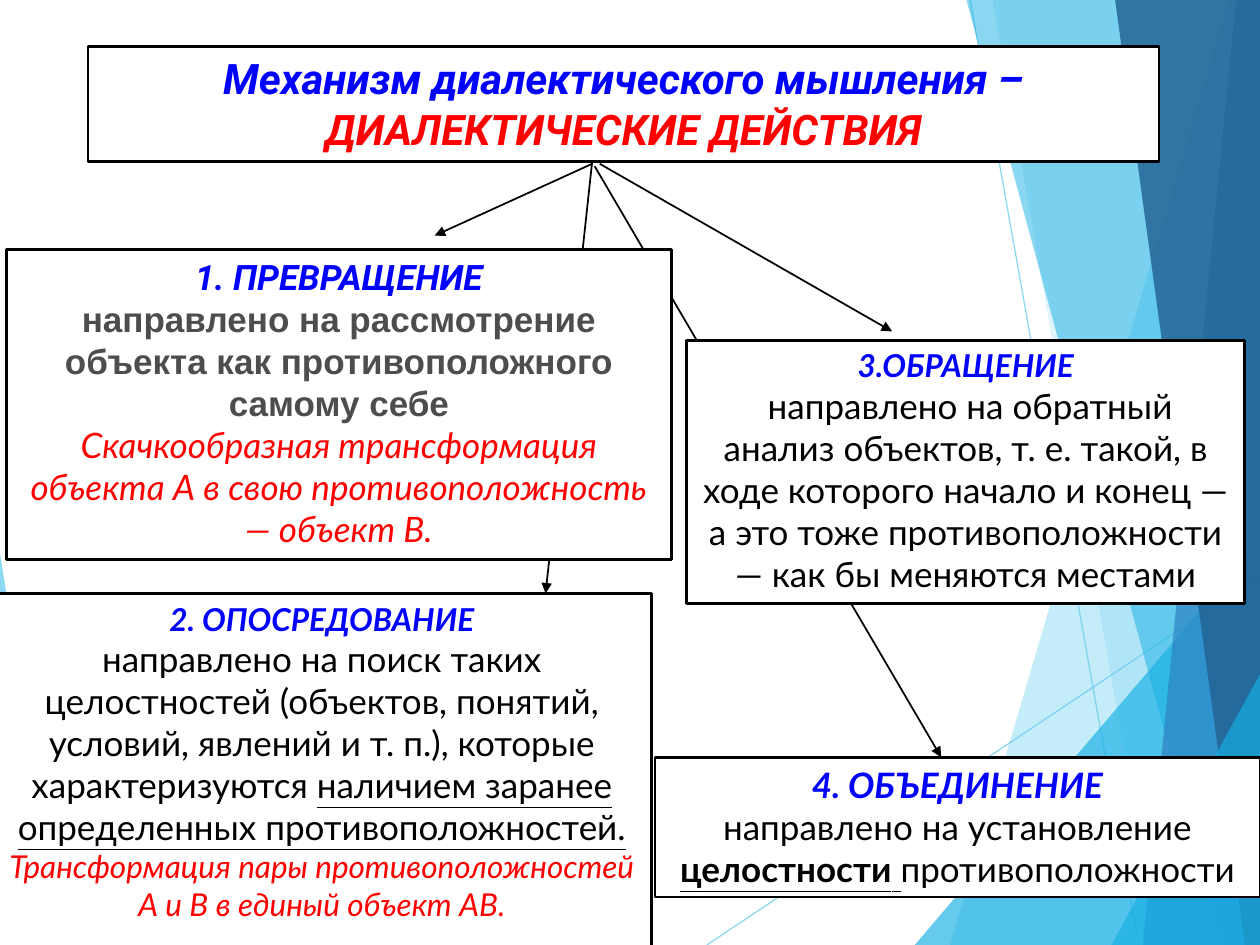
from lxml.etree import SubElement
from pptx import Presentation
from pptx.dml.color import RGBColor
from pptx.enum.shapes import MSO_CONNECTOR, MSO_SHAPE
from pptx.enum.text import MSO_ANCHOR, MSO_AUTO_SIZE, PP_ALIGN
from pptx.oxml.ns import qn
from pptx.util import Inches, Pt

COLORS = {
    "white": "FFFFFF",
    "black": "000000",
    "blue": "0000FF",
    "red": "FF0000",
    "gray": "4D4D4D",
    "sky": "5FCBEF",
    "cyan": "17B0E4",
    "steel": "2E83C3",
    "navy": "226292",
}

SLIDE_BOX = (0, 0, 10, 7.5)

FACET_LINES = [((5.61, 7.5), (10, 4.57)), ((7.7, 0), (9.04, 7.5))]
LEFT_FACET = ("sky", 70, [(0, 4.39), (0.49, 7.5), (0, 7.5)])
RIGHT_FACETS = [
    ("sky", 36, [(9.75, 0), (7.54, 7.5), (10, 7.5), (10, 0)]),
    ("sky", 20, [(7.88, 0), (9.19, 7.5), (10, 7.5), (10, 0)]),
    ("cyan", 66, [(7.26, 7.5), (10, 4.29), (10, 7.5)]),
    ("cyan", 50, [(7.67, 0), (9.7, 7.5), (10, 7.5), (10, 0)]),
    ("steel", 70, [(9.81, 0), (9.07, 7.5), (10, 7.5), (10, 0)]),
    ("navy", 82, [(8.85, 0), (9.88, 7.5), (10, 7.5), (10, 0)]),
    ("cyan", 66, [(8.82, 7.5), (10, 5.35), (10, 7.5)]),
]

ARROWS_BEHIND = [((4.72, 1.32), (7.47, 6.01)), ((4.7, 1.28), (4.33, 4.71))]
ARROWS_IN_FRONT = [((4.7, 1.3), (3.45, 1.87)), ((4.76, 1.3), (7.08, 2.63))]


def text_style(size, color, name="Lato", **flags):
    return {"size": Pt(size), "color": color, "name": name, **flags}


def heading(size, name="Lato", color="blue"):
    return text_style(size, color, name, bold=True, italic=True)


BODY = text_style(20, "black")
UNDERLINED = {**BODY, "underline": True}

CARDS = [
    ((0.7, 0.37, 8.5, 0.91), [
        [("Механизм диалектического мышления – ", heading(24, "Roboto")),
         ("ДИАЛЕКТИЧЕСКИЕ ДЕЙСТВИЯ", heading(24, "Roboto", "red"))],
    ]),
    ((5.2, 6.01, 4.8, 1.11), [
        [("4. ОБЪЕДИНЕНИЕ", heading(20))],
        [("направлено на установление ", BODY),
         ("целостности", {**UNDERLINED, "bold": True}),
         (" ", UNDERLINED),
         ("противоположности", BODY)],
    ]),
    ((-0.06, 4.71, 5.23, 3.3), [
        [("2. ОПОСРЕДОВАНИЕ", heading(18))],
        [("направлено на поиск таких целостностей (объектов, понятий, условий, "
          "явлений и т. п.), которые характеризуются ", BODY),
         ("наличием заранее определенных противоположностей.", UNDERLINED)],
        [("Трансформация пары противоположностей А и В в единый объект АВ.",
          text_style(18, "red", italic=True))],
    ]),
    ((5.45, 2.7, 4.43, 2.09), [
        [("3.ОБРАЩЕНИЕ", heading(18))],
        [(" направлено на обратный анализ объектов, т. е. такой, в ходе которого "
          "начало и конец — а это тоже противоположности — как бы меняются местами",
          BODY)],
    ]),
    ((0.05, 1.98, 5.28, 2.46), [
        [("1. ПРЕВРАЩЕНИЕ", heading(20, "Roboto"))],
        [("направлено на рассмотрение объекта как противоположного самому себе",
          text_style(20, "gray", "Arial", bold=True))],
        [("Скачкообразная трансформация объекта А в свою "
          "противоположность — объект В.", text_style(20, "red", italic=True))],
    ]),
]


def rgb(color):
    return RGBColor.from_string(COLORS[color])


def set_opacity(shape, percent):
    for color in shape._element.spPr.iter(qn("a:srgbClr")):
        SubElement(color, qn("a:alpha"), val=str(percent * 1000))


def add_line(slide, box, start, end, color, width):
    left, top = box[:2]
    line = slide.shapes.add_connector(
        MSO_CONNECTOR.STRAIGHT,
        Inches(left + start[0]), Inches(top + start[1]),
        Inches(left + end[0]), Inches(top + end[1]),
    )
    line.line.color.rgb = rgb(color)
    line.line.width = Pt(width)
    SubElement(line._element.spPr, qn("a:effectLst"))
    return line


def add_facet(slide, box, color, opacity, points):
    left, top = box[:2]
    corners = [(Inches(left + x), Inches(top + y)) for x, y in points]
    builder = slide.shapes.build_freeform(*corners[0])
    builder.add_line_segments(corners[1:], close=True)
    facet = builder.convert_to_shape()
    facet.shadow.inherit = False
    facet.fill.solid()
    facet.fill.fore_color.rgb = rgb(color)
    facet.line.fill.background()
    set_opacity(facet, opacity)


def add_backdrop(slide, box):
    add_facet(slide, box, *LEFT_FACET)
    for start, end in FACET_LINES:
        set_opacity(add_line(slide, box, start, end, "sky", 0.75), 70)
    for facet in RIGHT_FACETS:
        add_facet(slide, box, *facet)


def add_arrows(slide, box, arrows):
    for start, end in arrows:
        arrow = add_line(slide, box, start, end, "black", 1)
        outline = arrow._element.spPr.find(qn("a:ln"))
        SubElement(outline, qn("a:tailEnd"), type="triangle")


def add_run(paragraph, text, style):
    run = paragraph.add_run()
    run.text = text
    for attribute, value in style.items():
        if attribute == "color":
            run.font.color.rgb = rgb(value)
        else:
            setattr(run.font, attribute, value)


def add_card(slide, box, paragraphs):
    card = slide.shapes.add_shape(MSO_SHAPE.RECTANGLE, *map(Inches, box))
    card.shadow.inherit = False
    card.fill.solid()
    card.fill.fore_color.rgb = rgb("white")
    card.line.color.rgb = rgb("black")
    card.line.width = Pt(1.5)
    frame = card.text_frame
    frame.word_wrap = True
    frame.auto_size = MSO_AUTO_SIZE.SHAPE_TO_FIT_TEXT
    frame.vertical_anchor = MSO_ANCHOR.TOP
    for index, runs in enumerate(paragraphs):
        paragraph = frame.add_paragraph() if index else frame.paragraphs[0]
        paragraph.alignment = PP_ALIGN.CENTER
        for text, style in runs:
            add_run(paragraph, text, style)


def main():
    presentation = Presentation()
    presentation.slide_width = Inches(SLIDE_BOX[2])
    presentation.slide_height = Inches(SLIDE_BOX[3])
    slide = presentation.slides.add_slide(presentation.slide_layouts[6])
    add_backdrop(slide, SLIDE_BOX)
    add_arrows(slide, SLIDE_BOX, ARROWS_BEHIND)
    for box, paragraphs in CARDS:
        add_card(slide, box, paragraphs)
    add_arrows(slide, SLIDE_BOX, ARROWS_IN_FRONT)
    presentation.save("out.pptx")


if __name__ == "__main__":
    main()
